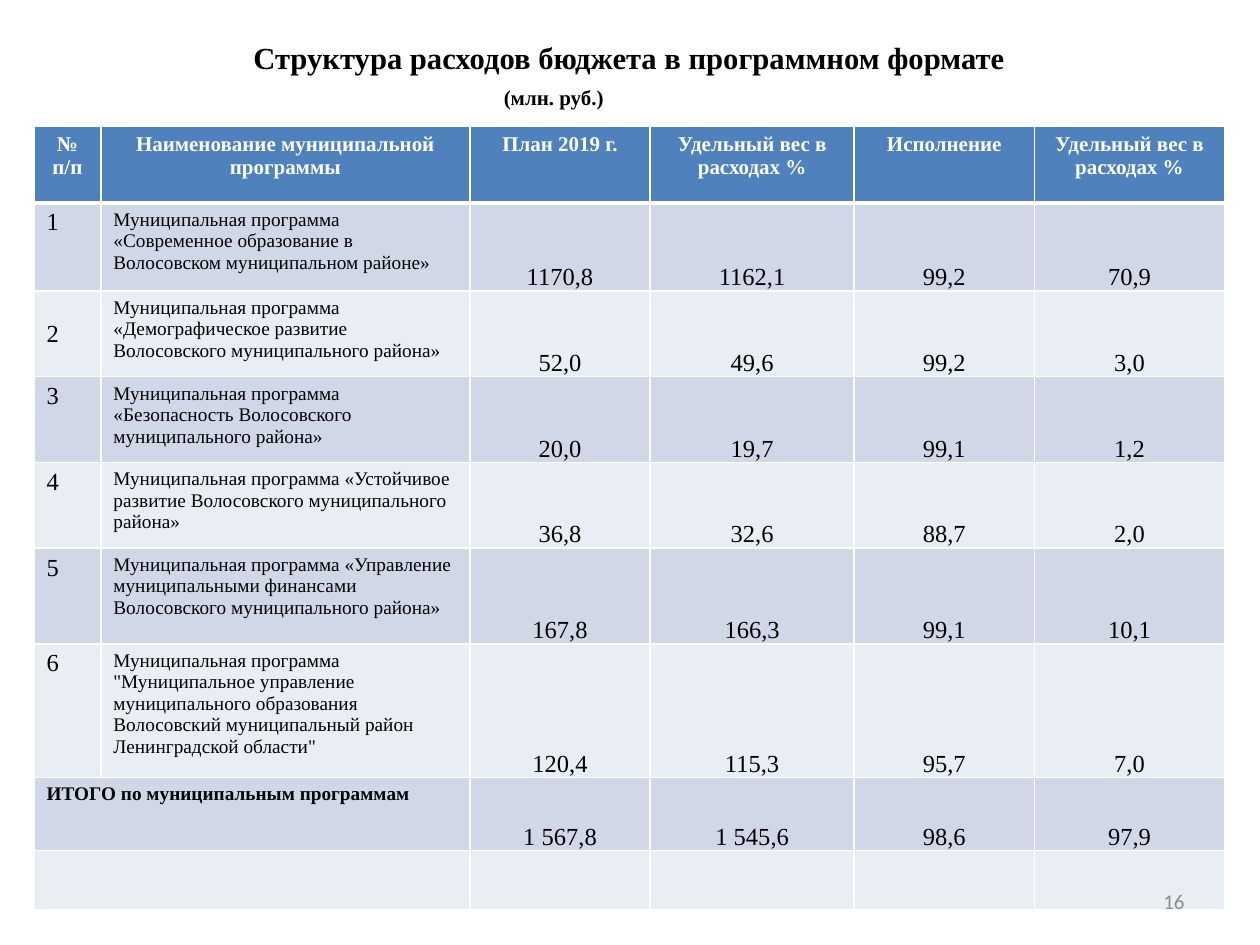
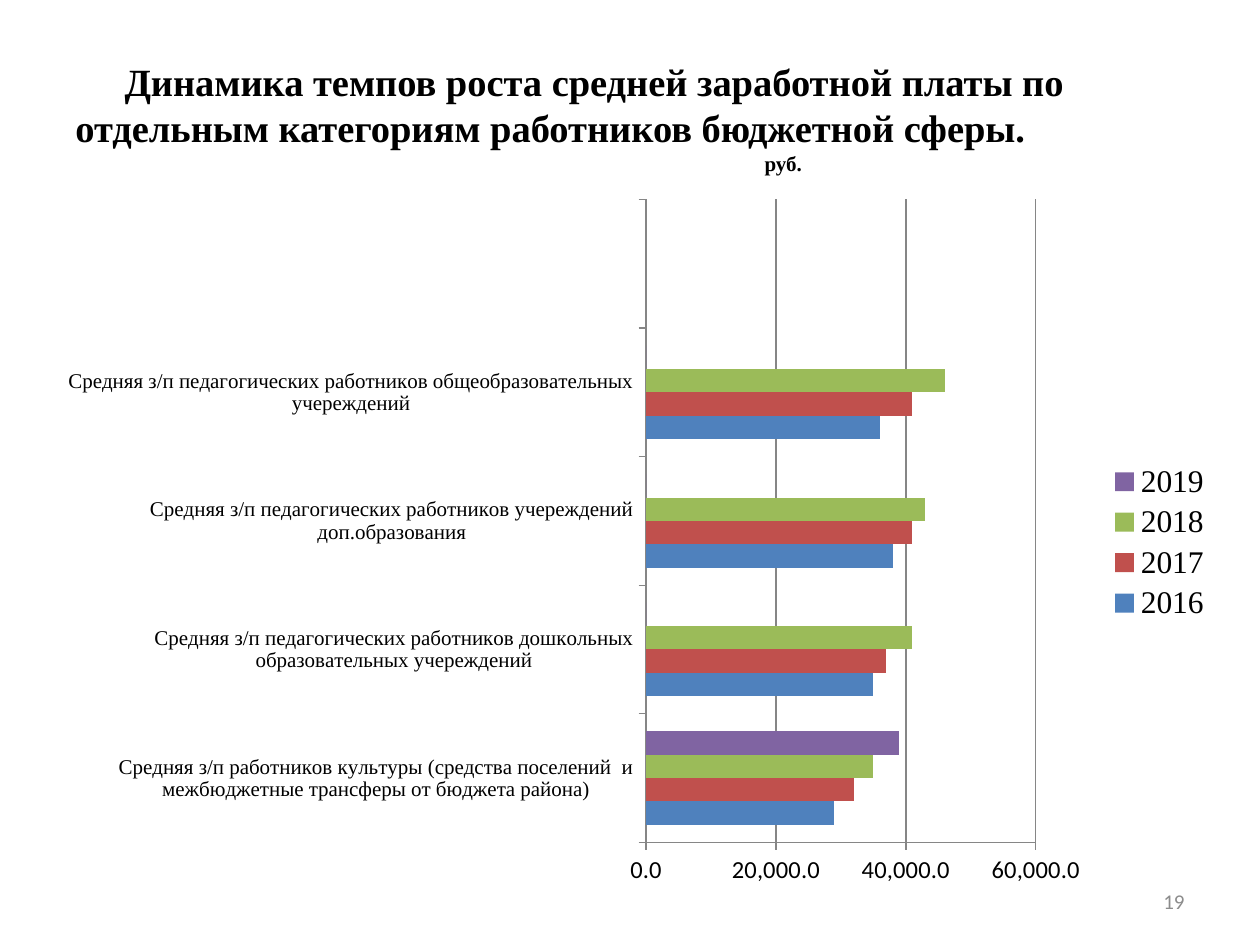
from lxml.etree import SubElement
from pptx import Presentation
from pptx.chart.data import CategoryChartData
from pptx.dml.color import RGBColor
from pptx.enum.chart import XL_CHART_TYPE, XL_LEGEND_POSITION, XL_TICK_MARK
from pptx.enum.text import MSO_ANCHOR, PP_ALIGN
from pptx.oxml.ns import qn
from pptx.util import Inches, Pt

COLORS = {
    "text": "000000",
    "white": "FFFFFF",
    "page_number": "8C8C8C",
    "header": "4F81BD",
    "odd_row": "D0D8E8",
    "even_row": "E9EDF4",
    "axis": "868686",
}
SERIF = "Times New Roman"
SANS = "Calibri"

COLUMN_WIDTHS = [0.53, 2.93, 1.43, 1.62, 1.43, 1.51]
ROW_HEIGHTS = [0.61, 0.7, 0.68, 0.68, 0.68, 0.76, 1.06, 0.58, 0.47]
HEADERS = ["№\nп/п", "Наименование муниципальной программы", "План 2019 г.",
           "Удельный вес в расходах %", "Исполнение", "Удельный вес в расходах %"]
PROGRAMS = [
    ("Муниципальная программа «Современное образование в Волосовском муниципальном районе»",
     "1170,8", "1162,1", "99,2", "70,9"),
    ("Муниципальная программа «Демографическое развитие Волосовского муниципального района»",
     "52,0", "49,6", "99,2", "3,0"),
    ("Муниципальная программа «Безопасность Волосовского муниципального района»",
     "20,0", "19,7", "99,1", "1,2"),
    ("Муниципальная программа «Устойчивое развитие Волосовского муниципального района»",
     "36,8", "32,6", "88,7", "2,0"),
    ("Муниципальная программа «Управление муниципальными финансами Волосовского муниципального района»",
     "167,8", "166,3", "99,1", "10,1"),
    ("Муниципальная программа \"Муниципальное управление муниципального образования "
     "Волосовский муниципальный район Ленинградской области\"",
     "120,4", "115,3", "95,7", "7,0"),
]
TOTALS = ["1 567,8", "1 545,6", "98,6", "97,9"]

# The last slot of the salary chart has neither a label nor bars.
SALARY_CATEGORIES = [
    "Средняя з/п работников культуры (средства поселений  и межбюджетные трансферы от бюджета района)",
    "Средняя з/п педагогических работников дошкольных образовательных учереждений",
    "Средняя з/п педагогических работников учереждений доп.образования",
    "Средняя з/п педагогических работников общеобразовательных учереждений",
    "",
]
SALARIES = [
    ("2016", "4F81BD", [29000, 35000, 38000, 36000, None]),
    ("2017", "C0504D", [32000, 37000, 41000, 41000, None]),
    ("2018", "9BBB59", [35000, 41000, 43000, 46000, None]),
    ("2019", "8064A2", [39000, 0, 0, 0, None]),
]


def rgb(name):
    return RGBColor.from_string(COLORS[name])


def style_font(font, size, name=SERIF, color="text", bold=False):
    font.size = Pt(size)
    font.name = name
    font.bold = bold
    font.color.rgb = rgb(color)


def write(frame, text, size, align=PP_ALIGN.LEFT, **style):
    """Fill a text frame, one paragraph for each line of text."""
    for index, line in enumerate(text.split("\n")):
        para = frame.paragraphs[0] if index == 0 else frame.add_paragraph()
        para.alignment = align
        span = para.add_run()
        span.text = line
        style_font(span.font, size, **style)


def add_text(page, text, left, top, width, height, size,
             anchor=MSO_ANCHOR.MIDDLE, **style):
    box = page.shapes.add_textbox(Inches(left), Inches(top), Inches(width), Inches(height))
    box.text_frame.word_wrap = True
    box.text_frame.vertical_anchor = anchor
    write(box.text_frame, text, size, **style)
    return box


def add_page_number(page, number):
    add_text(page, number, 7.17, 6.95, 2.33, 0.4, 12, align=PP_ALIGN.RIGHT,
             name=SANS, color="page_number")


def indent(para, margin, first_line=0):
    properties = para._p.get_or_add_pPr()
    properties.set("marL", str(Inches(margin)))
    properties.set("indent", str(Inches(first_line)))


def style_cell(cell, fill, bottom_border=1):
    """Draw white borders, then the fill, in the order the format requires."""
    properties = cell._tc.get_or_add_tcPr()
    for side, width in (("L", 1), ("R", 1), ("T", 1), ("B", bottom_border)):
        line = SubElement(properties, qn(f"a:ln{side}"), w=str(Pt(width)))
        solid = SubElement(line, qn("a:solidFill"))
        SubElement(solid, qn("a:srgbClr"), val=COLORS["white"])
    cell.fill.solid()
    cell.fill.fore_color.rgb = rgb(fill)


def write_amounts(table, row, amounts):
    for column, amount in enumerate(amounts, start=2):
        cell = table.cell(row, column)
        cell.vertical_anchor = MSO_ANCHOR.BOTTOM
        cell.margin_left = cell.margin_right = cell.margin_top = Inches(0.01)
        cell.margin_bottom = 0
        write(cell.text_frame, amount, 14, PP_ALIGN.CENTER)


def add_program_table(page):
    table = page.shapes.add_table(
        len(ROW_HEIGHTS), len(COLUMN_WIDTHS), Inches(0.27), Inches(1),
        Inches(sum(COLUMN_WIDTHS)), Inches(sum(ROW_HEIGHTS))).table
    for column, width in zip(table.columns, COLUMN_WIDTHS):
        column.width = Inches(width)
    for index, (row, height) in enumerate(zip(table.rows, ROW_HEIGHTS)):
        row.height = Inches(height)
        band = "odd_row" if index % 2 else "even_row"
        for cell in row.cells:
            if index == 0:
                style_cell(cell, "header", bottom_border=3)
            else:
                style_cell(cell, band)

    for column, header in enumerate(HEADERS):
        write(table.cell(0, column).text_frame, header, 12, PP_ALIGN.CENTER,
              color="white", bold=True)
    for row, (program, *amounts) in enumerate(PROGRAMS, start=1):
        write(table.cell(row, 0).text_frame, str(row), 14)
        write(table.cell(row, 1).text_frame, program, 11)
        write_amounts(table, row, amounts)
    table.cell(2, 0).vertical_anchor = MSO_ANCHOR.MIDDLE

    total_row = len(PROGRAMS) + 1
    for row in (total_row, total_row + 1):
        table.cell(row, 0).merge(table.cell(row, 1))
    write(table.cell(total_row, 0).text_frame, "ИТОГО по муниципальным программам", 11, bold=True)
    write_amounts(table, total_row, TOTALS)


def place_plot(chart, **fractions):
    """Fix the inner plot area as fractions of the chart frame."""
    plot_area = chart._chartSpace.chart.plotArea
    layout = plot_area.find(qn("c:layout"))
    if layout is None:
        layout = SubElement(plot_area, qn("c:layout"))
        plot_area.insert(0, layout)
    manual = SubElement(layout, qn("c:manualLayout"))
    settings = {"layoutTarget": "inner", "xMode": "edge", "yMode": "edge", **fractions}
    for tag, value in settings.items():
        SubElement(manual, qn(f"c:{tag}"), val=str(value))


def style_axis(axis, size, name):
    style_font(axis.tick_labels.font, size, name)
    axis.major_tick_mark = XL_TICK_MARK.OUTSIDE
    axis.minor_tick_mark = XL_TICK_MARK.NONE
    axis.format.line.color.rgb = rgb("axis")


def add_salary_chart(page):
    data = CategoryChartData()
    data.categories = SALARY_CATEGORIES
    for year, _, salaries in SALARIES:
        data.add_series(year, salaries)
    chart = page.shapes.add_chart(
        XL_CHART_TYPE.BAR_CLUSTERED, Inches(0.35), Inches(1.47),
        Inches(9.37), Inches(5.67), data).chart
    style_font(chart.font, 18, SANS)
    chart.has_title = False
    place_plot(chart, x=0.51, y=0.02, w=0.33, h=0.9)

    plot = chart.plots[0]
    plot.gap_width = 150
    plot.vary_by_categories = False
    for series, (_, color, _) in zip(plot.series, SALARIES):
        series.format.fill.solid()
        series.format.fill.fore_color.rgb = RGBColor.from_string(color)

    style_axis(chart.category_axis, 12, SERIF)
    values = chart.value_axis
    style_axis(values, 14, SANS)
    values.minimum_scale, values.maximum_scale, values.major_unit = 0, 60000, 20000
    values.has_major_gridlines = True
    values.major_gridlines.format.line.color.rgb = rgb("axis")
    values.tick_labels.number_format = "#,##0.0"
    values.tick_labels.number_format_is_linked = False

    chart.has_legend = True
    chart.legend.position = XL_LEGEND_POSITION.RIGHT
    chart.legend.include_in_layout = False
    style_font(chart.legend.font, 18)


def build_program_page(page):
    add_text(page, "Структура расходов бюджета в программном формате",
             0.49, 0.13, 9.01, 0.65, 17.5, align=PP_ALIGN.CENTER, bold=True)
    add_program_table(page)
    add_text(page, "(млн. руб.)", 3.9, 0.62, 1.3, 0.3, 12, anchor=MSO_ANCHOR.TOP, bold=True)
    add_page_number(page, "16")


def build_salary_page(page):
    title = add_text(
        page, "Динамика темпов роста средней заработной платы по отдельным "
        "категориям работников бюджетной сферы.\nруб.",
        0.5, 0.3, 8.44, 1.25, 22, bold=True)
    heading, unit = title.text_frame.paragraphs
    indent(heading, 0, first_line=0.39)
    indent(unit, 5.47)
    unit.runs[0].font.size = Pt(12)
    add_salary_chart(page)
    add_page_number(page, "19")


def main():
    deck = Presentation()
    deck.slide_width, deck.slide_height = Inches(10), Inches(7.5)
    blank = deck.slide_layouts[6]
    for build_page in (build_program_page, build_salary_page):
        build_page(deck.slides.add_slide(blank))
    deck.save("out.pptx")


if __name__ == "__main__":
    main()
